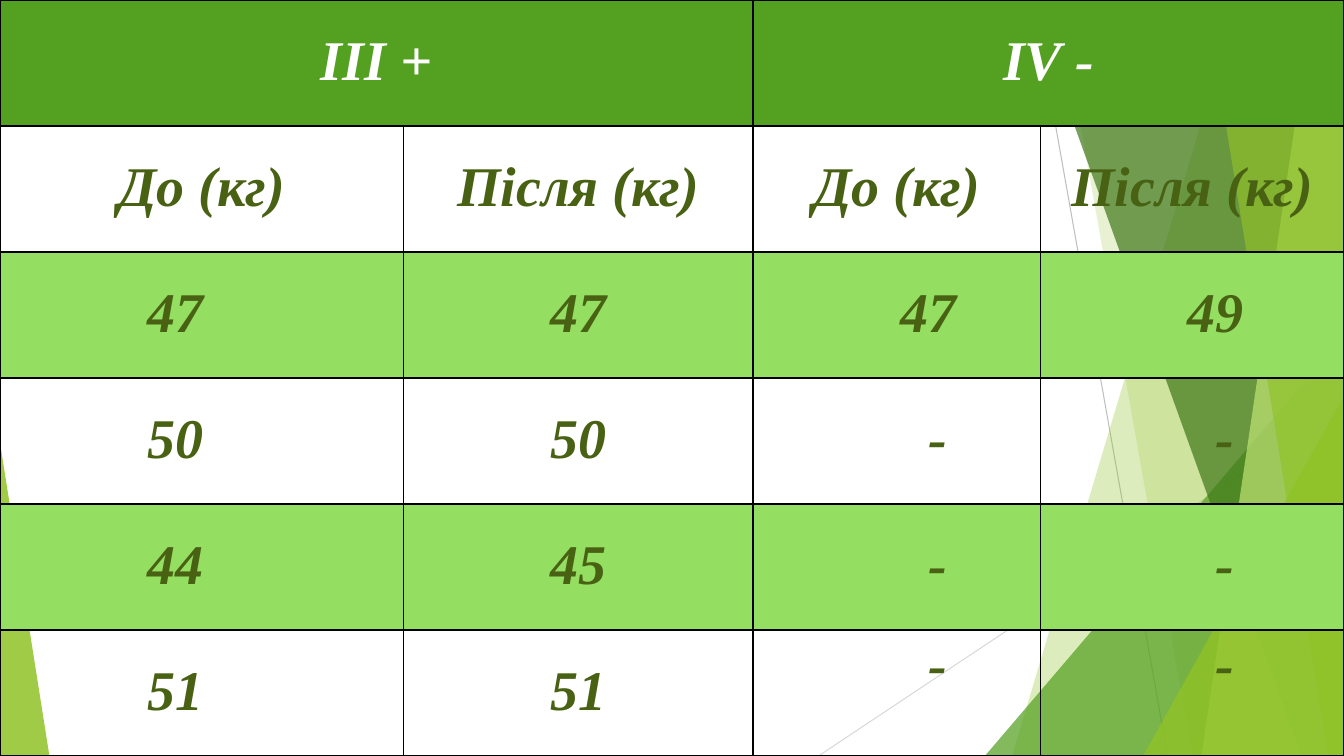
from dataclasses import dataclass
from typing import Optional, Union

from lxml.etree import SubElement as Sub
from pptx import Presentation
from pptx.dml.color import RGBColor as RGB
from pptx.enum.shapes import MSO_CONNECTOR as Conn, MSO_SHAPE as Shape
from pptx.enum.text import PP_ALIGN as Align
from pptx.oxml.ns import qn
from pptx.util import Inches, Pt

WIDE, HIGH = Inches(13.333), Inches(7.5)


@dataclass(frozen=True)
class Theme:
    font: str = "Times New Roman"
    size: float = 40
    white: str = "FFFFFF"
    olive: str = "486113"
    green: str = "54A021"
    band: str = "94DE61"
    rule: str = "000000"
    lime: str = "90C226"
    pale: str = "C0E474"
    dark: str = "3F7819"
    gray: str = "BFBFBF"
    mist: str = "D9D9D9"


THEME = Theme()


# Places below are percent shares of the slide's width (x) and height (y).
@dataclass(frozen=True)
class Ray:
    x1: float
    y1: float
    x2: float
    y2: float
    color: str


@dataclass(frozen=True)
class Pane:
    """Full-height sheet reaching the right edge, with a slanted left side."""
    top: float
    foot: float
    color: str
    alpha: int


@dataclass(frozen=True)
class Wedge:
    """Right triangle standing on the slide's bottom edge."""
    left: float
    top: float
    width: float
    peak: float
    color: str
    alpha: int


DECOR: list[Union[Ray, Pane, Wedge]] = [
    Ray(76.88, 0, 86.88, 100, THEME.gray),
    Ray(100, 53.73, 60.9, 100, THEME.mist),
    Pane(92.1, 75.3, THEME.lime, 30),
    Pane(78.75, 88.73, THEME.lime, 20),
    Wedge(73.28, 44.4, 26.72, 1, THEME.green, 72),
    Pane(76.58, 96.83, THEME.dark, 70),
    Pane(97.73, 89.4, THEME.pale, 70),
    Pane(89.7, 98.85, THEME.lime, 65),
    Wedge(85.05, 52.4, 14.95, 1, THEME.lime, 80),
    Wedge(0, 58.53, 3.68, 0, THEME.lime, 85),
]

COLS = [30, 26.03, 21.38, 22.59]
HEADS = ["ІІІ +", "ІV -"]
UNITS = ["До (кг)", "Після (кг)"] * 2
DATA = [
    ["47", "47", "47", "49"],
    ["50", "50", "-", "-"],
    ["44", "45", "-", "-"],
    ["51", "51", "-", "-"],
]


def px(share: float) -> int:
    return round(WIDE * share / 100)


def py(share: float) -> int:
    return round(HIGH * share / 100)


def tint(shape, color: str, alpha: int) -> None:
    shape.shadow.inherit = False
    shape.line.fill.background()
    shape.fill.solid()
    shape.fill.fore_color.rgb = RGB.from_string(color)
    tone = shape.fill._xPr.find(qn("a:solidFill"))[0]
    Sub(tone, qn("a:alpha"), val=str(alpha * 1000))


def draw(shapes, item: Union[Ray, Pane, Wedge]) -> None:
    if isinstance(item, Ray):
        line = shapes.add_connector(Conn.STRAIGHT, px(item.x1), py(item.y1),
                                    px(item.x2), py(item.y2))
        line.line.color.rgb = RGB.from_string(item.color)
        line.line.width = Pt(0.75)
        Sub(line._element.spPr, qn("a:effectLst"))
        return
    if isinstance(item, Pane):
        path = shapes.build_freeform(px(item.top), 0)
        path.add_line_segments([(WIDE, 0), (WIDE, HIGH), (px(item.foot), HIGH)])
        shape = path.convert_to_shape()
    else:
        shape = shapes.add_shape(Shape.ISOSCELES_TRIANGLE, px(item.left), py(item.top),
                                 px(item.width), py(100 - item.top))
        shape.adjustments[0] = item.peak
    tint(shape, item.color, item.alpha)


def write(cell, text: str, *, color: str = THEME.olive, align: Align = Align.CENTER,
          space: float = 1.5, indent: float = 0) -> None:
    para = cell.text_frame.paragraphs[0]
    para.alignment = align
    para.line_spacing = space
    if indent:
        para._p.get_or_add_pPr().set("marL", str(px(indent)))
    run = para.add_run()
    run.text = text
    font = run.font
    font.name, font.size = THEME.font, Pt(THEME.size)
    font.bold = font.italic = True
    font.color.rgb = RGB.from_string(color)


def dress(cell, fill: Optional[str]) -> None:
    """Set a cell's margins, borders and fill."""
    cell.margin_left = cell.margin_right = Inches(0.07)
    cell.margin_top = cell.margin_bottom = 0
    props = cell._tc.get_or_add_tcPr()
    for side in ("lnL", "lnR", "lnT", "lnB"):
        edge = Sub(props, qn(f"a:{side}"), w=str(Pt(1)))
        Sub(Sub(edge, qn("a:solidFill")), qn("a:srgbClr"), val=THEME.rule)
    if fill:
        cell.fill.solid()
        cell.fill.fore_color.rgb = RGB.from_string(fill)
    else:
        cell.fill.background()


def chart(shapes) -> None:
    """Add the weight table over the whole slide."""
    count = len(DATA) + 2
    grid = shapes.add_table(count, len(COLS), 0, 0, WIDE, HIGH).table
    grid.first_row = grid.horz_banding = False
    for col, share in zip(grid.columns, COLS):
        col.width = px(share)
    for row in grid.rows:
        row.height = HIGH // count
    fills = [THEME.green, None] + [THEME.band, None] * (len(DATA) // 2)
    for r, fill in enumerate(fills):
        for c in range(len(COLS)):
            dress(grid.cell(r, c), fill)
    for i, text in enumerate(HEADS):
        head = grid.cell(0, 2 * i)
        head.merge(grid.cell(0, 2 * i + 1))
        write(head, text, color=THEME.white)
    for c, text in enumerate(UNITS):
        write(grid.cell(1, c), text)
    for r, row in enumerate(DATA, 2):
        for c, text in enumerate(row):
            dash = text == "-"
            write(grid.cell(r, c), text, align=Align.LEFT,
                  space=1.07 if dash and r == count - 1 else 1.5,
                  indent=12.5 if dash else 10.42)


def main() -> None:
    deck = Presentation()
    deck.slide_width, deck.slide_height = WIDE, HIGH
    shapes = deck.slides.add_slide(deck.slide_layouts[6]).shapes
    for item in DECOR:
        draw(shapes, item)
    chart(shapes)
    deck.save("out.pptx")


if __name__ == "__main__":
    main()
